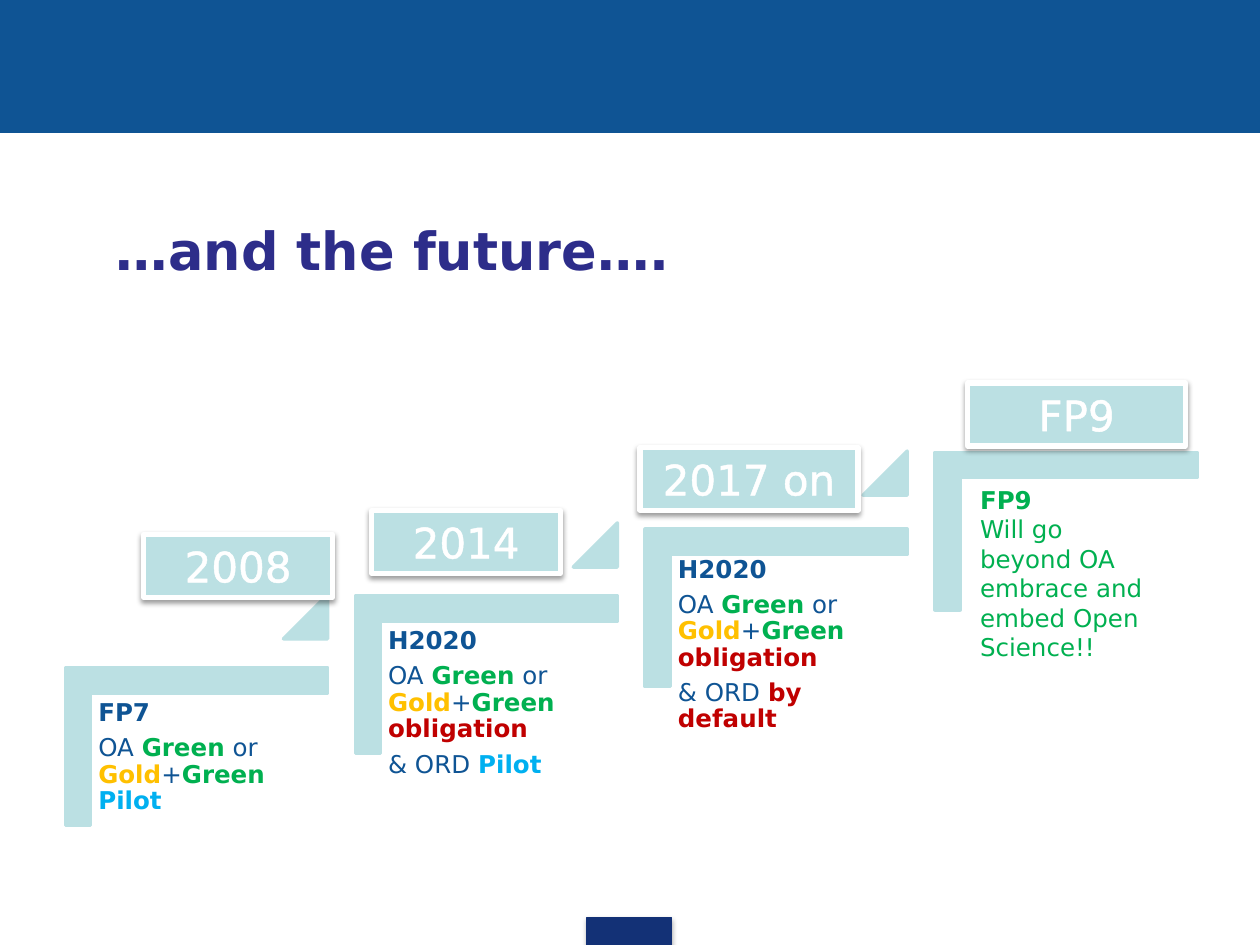
"""Build the slide that shows open access policy as four rising steps."""
import lxml.etree
import pptx
import pptx.dml.color
import pptx.enum.shapes
import pptx.enum.text
import pptx.oxml.ns
import pptx.util

RGB = pptx.dml.color.RGBColor
SHAPE = pptx.enum.shapes.MSO_SHAPE
BLUE, NAVY, INDIGO = RGB(0x0F, 0x54, 0x94), RGB(0x13, 0x31, 0x76), RGB(0x2D, 0x2D, 0x8A)
PALE, WHITE = RGB(0xBB, 0xE0, 0xE3), RGB(0xFF, 0xFF, 0xFF)
GREEN, GOLD = RGB(0x00, 0xB0, 0x50), RGB(0xFF, 0xC0, 0x00)
RED, SKY = RGB(0xC0, 0x00, 0x00), RGB(0x00, 0xB0, 0xF0)

FONT = "DejaVu Sans"
WIDTH, HEIGHT = 10, 7.5
TITLE = [[("…and the future….", INDIGO, True)]]
ROUTES = [("OA ", BLUE, False), ("Green", GREEN, True), (" or\n", BLUE, False),
          ("Gold", GOLD, True), ("+", BLUE, False), ("Green ", GREEN, True)]
OBLIGATION = ROUTES + [("obligation", RED, True)]
DATA = ("& ORD ", BLUE, False)
STEPS = [
    [[("FP7", BLUE, True)], ROUTES + [("Pilot", SKY, True)]],
    [[("H2020", BLUE, True)], OBLIGATION, [DATA, ("Pilot", SKY, True)]],
    [[("H2020", BLUE, True)], OBLIGATION, [DATA, ("by default", RED, True)]],
]
FUTURE = [[("FP9", GREEN, True)],
          [("Will go beyond OA embrace and embed Open Science!!", GREEN, False)]]
LABELS = [("2008", 1.14, 4.24, 1.5), ("2014", 2.95, 4.05, 1.5),
          ("2017 on", 5.08, 3.55, 1.73), ("FP9", 7.68, 3.04, 1.73)]

FIRST_LEFT, FIRST_TOP = 0.72, 5.5
STEP_RIGHT, STEP_UP = 2.3, 0.57
STEP_WIDTH, STEP_HEIGHT = 1.88, 1.65
BRACKET_WIDTH, BRACKET_HEIGHT, BRACKET_OFFSET = 2.08, 1.25, 0.2
BRACKET_DROPS = [0, 0, 0.04, 0]
ARROW_SIZE, ARROW_RIGHT, ARROW_UP = 0.35, 1.53, 0.78
LABEL_HEIGHT = 0.5


def inches(*lengths):
    return [pptx.util.Inches(length) for length in lengths]


def set_all(target, values):
    for name, value in values.items():
        setattr(target, name, value)


def add_filled(slide, preset, box, fill, line, weight):
    shape = slide.shapes.add_shape(preset, *inches(*box))
    shape.shadow.inherit = False
    shape.fill.solid()
    shape.fill.fore_color.rgb = fill
    shape.line.color.rgb = line
    shape.line.width = pptx.util.Pt(weight)
    return shape


def add_shadow(shape, opacity):
    effects = shape._element.spPr.find(pptx.oxml.ns.qn("a:effectLst"))
    shadow = lxml.etree.SubElement(
        effects, pptx.oxml.ns.qn("a:outerShdw"), blurRad=str(pptx.util.Pt(3.1)),
        dist=str(pptx.util.Pt(1.7)), dir="5400000", rotWithShape="0")
    black = lxml.etree.SubElement(shadow, pptx.oxml.ns.qn("a:srgbClr"), val="000000")
    lxml.etree.SubElement(black, pptx.oxml.ns.qn("a:alpha"), val=str(opacity * 1000))


def outline_text(run, colour, weight):
    line = lxml.etree.Element(pptx.oxml.ns.qn("a:ln"), w=str(pptx.util.Pt(weight)))
    solid = lxml.etree.SubElement(line, pptx.oxml.ns.qn("a:solidFill"))
    lxml.etree.SubElement(solid, pptx.oxml.ns.qn("a:srgbClr"), val=str(colour))
    run._r.get_or_add_rPr().insert(0, line)


def write(frame, paragraphs, size, frame_format, paragraph_format):
    set_all(frame, {"word_wrap": True, **frame_format})
    for index, pieces in enumerate(paragraphs):
        paragraph = frame.add_paragraph() if index else frame.paragraphs[0]
        set_all(paragraph, paragraph_format)
        for words, colour, bold in pieces:
            run = paragraph.add_run()
            run.text = words.rstrip("\n")
            set_all(run.font, {"name": FONT, "size": pptx.util.Pt(size), "bold": bold})
            run.font.color.rgb = colour
            if words.endswith("\n"):
                paragraph.add_line_break()


def add_text(slide, box, *content):
    write(slide.shapes.add_textbox(*inches(*box)).text_frame, *content)


def add_bracket(slide, left, top):
    across = (BRACKET_WIDTH - BRACKET_HEIGHT) / 2
    box = (left + across, top - across, BRACKET_HEIGHT, BRACKET_WIDTH)
    bracket = add_filled(slide, SHAPE.CORNER, box, PALE, PALE, 2)
    bracket.rotation = 90
    bracket.adjustments[0] = bracket.adjustments[1] = 0.16


def add_steps(slide):
    margin = pptx.util.Inches(0.06)
    margins = {f"margin_{side}": margin for side in ("left", "top", "right", "bottom")}
    spacing = {"line_spacing": 0.9, "space_after": pptx.util.Pt(4.9)}
    for index, drop in enumerate(BRACKET_DROPS):
        left = FIRST_LEFT + index * STEP_RIGHT
        top = FIRST_TOP - index * STEP_UP
        add_bracket(slide, left - BRACKET_OFFSET, top - BRACKET_OFFSET + drop)
        if index < len(STEPS):
            add_text(slide, (left, top, STEP_WIDTH, STEP_HEIGHT),
                     STEPS[index], 14, margins, spacing)
            arrow_box = (left + ARROW_RIGHT, top - ARROW_UP, ARROW_SIZE, ARROW_SIZE)
            arrow = add_filled(slide, SHAPE.ISOSCELES_TRIANGLE, arrow_box, PALE, PALE, 2)
            arrow.adjustments[0] = 1


def add_labels(slide):
    for words, left, top, width in LABELS:
        box = (left, top, width, LABEL_HEIGHT)
        label = add_filled(slide, SHAPE.RECTANGLE, box, PALE, WHITE, 3)
        add_shadow(label, 38)
        write(label.text_frame, [[(words, WHITE, False)]], 24,
              {"vertical_anchor": pptx.enum.text.MSO_ANCHOR.TOP,
               "auto_size": pptx.enum.text.MSO_AUTO_SIZE.SHAPE_TO_FIT_TEXT},
              {"alignment": pptx.enum.text.PP_ALIGN.CENTER})
        outline_text(label.text_frame.paragraphs[0].runs[0], WHITE, 1.45)


def main():
    deck = pptx.Presentation()
    set_all(deck, dict(zip(("slide_width", "slide_height"), inches(WIDTH, HEIGHT))))
    slide = deck.slides.add_slide(deck.slide_layouts[6])
    add_filled(slide, SHAPE.RECTANGLE, (0, 0, WIDTH, HEIGHT * 0.14), BLUE, BLUE, 0.75)
    tab = add_filled(slide, SHAPE.RECTANGLE, (4.66, 7.28, 0.67, 0.22), NAVY, NAVY, 0.75)
    add_shadow(tab, 35)
    add_text(slide, (0.43, 1.47, 9.57, 1.02), TITLE, 30,
             {"vertical_anchor": pptx.enum.text.MSO_ANCHOR.MIDDLE,
              "margin_left": pptx.util.Inches(0.49)}, {})
    add_steps(slide)
    add_labels(slide)
    add_text(slide, (7.68, 3.8, 1.57, 1.51), FUTURE, 14,
             {"auto_size": pptx.enum.text.MSO_AUTO_SIZE.SHAPE_TO_FIT_TEXT}, {})
    deck.save("out.pptx")


if __name__ == "__main__":
    main()
